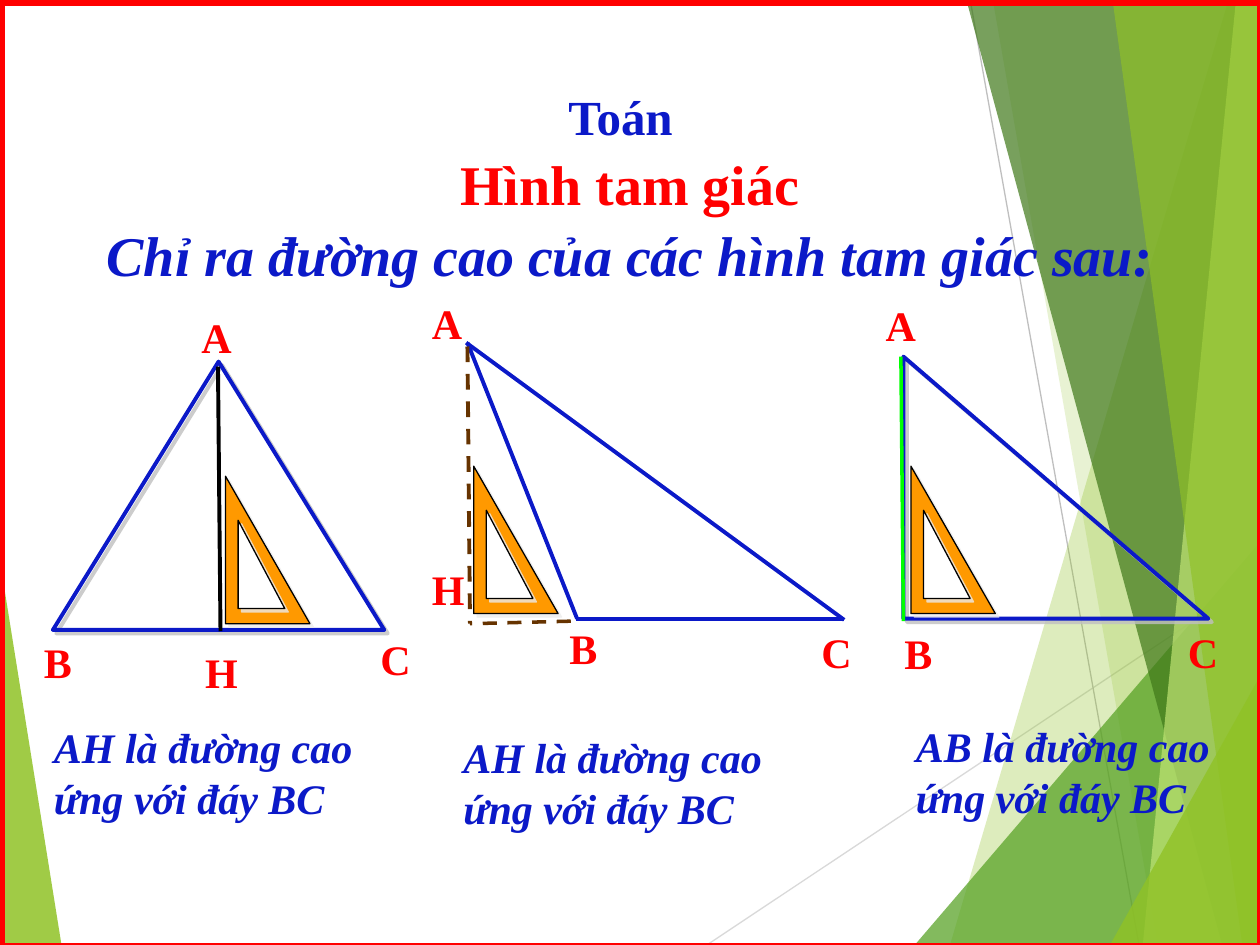
from dataclasses import dataclass
from typing import Optional

from lxml import etree
from pptx import Presentation
from pptx import util as u
from pptx.dml.color import RGBColor
from pptx.enum import dml, shapes, text
from pptx.oxml import ns


@dataclass(frozen=True)
class Theme:
    font: str = "Times New Roman"
    blue: str = "0B19C8"
    red: str = "FF0000"
    black: str = "000000"
    white: str = "FFFFFF"
    brown: str = "663300"
    green: str = "00FF00"
    orange: str = "FF9900"
    shadow: str = "C0C0C0"
    pale_shadow: str = "EBEBEB"
    leaf: str = "90C226"
    grass: str = "54A021"
    forest: str = "3F7819"
    lime: str = "C0E474"
    title: int = 32
    subject: int = 28
    body: int = 24
    outline: float = 2.25


@dataclass(frozen=True)
class Facet:
    points: tuple
    color: str
    alpha: int


@dataclass(frozen=True)
class Line:
    start: tuple
    end: tuple
    color: str
    width: float = 2.25
    dashed: bool = False


@dataclass(frozen=True)
class Label:
    words: str
    box: tuple
    color: str
    size: int = 24
    italic: bool = False
    centred: bool = False
    spaced: bool = True


T = Theme()
EDGE = 10.01

LEFT_FACET = Facet(((-0.01, 4.39), (0.49, 7.51), (-0.01, 7.5)), T.leaf, 85)
BACK_LINES = (
    Line((5.61, 7.5), (EDGE, 4.57), "D9D9D9", 0.75),
    Line((7.7, 0), (9.04, 7.5), "BFBFBF", 0.75),
)
RIGHT_FACETS = (
    Facet(((9.75, 0), (7.54, 7.5), (EDGE, 7.5), (EDGE, 0)), T.leaf, 30),
    Facet(((7.88, 0), (9.19, 7.5), (EDGE, 7.5), (EDGE, 0)), T.leaf, 20),
    Facet(((7.26, 7.5), (EDGE, 4.29), (EDGE, 7.5)), T.grass, 72),
    Facet(((7.67, 0), (9.7, 7.5), (EDGE, 7.5), (EDGE, 0)), T.forest, 70),
    Facet(((9.81, 0), (9.07, 7.5), (EDGE, 7.5), (EDGE, 0)), T.lime, 70),
    Facet(((8.83, 0), (9.86, 7.5), (10, 7.5), (9.98, 0)), T.leaf, 65),
    Facet(((8.81, 7.5), (EDGE, 5.35), (EDGE, 7.5)), T.leaf, 80),
)
VERTICES = (
    ("A", 1.5, 2.42), ("B", 0.25, 5), ("C", 2.92, 4.98), ("H", 1.53, 5.08),
    ("A", 3.33, 2.31), ("B", 4.42, 4.89), ("C", 6.42, 4.92), ("H", 3.33, 4.42),
    ("A", 6.93, 2.33), ("B", 7.08, 4.93), ("C", 9.33, 4.92),
)
FIGURE_LINES = (
    Line((3.71, 2.72), (4.58, 4.91), T.blue),
    Line((3.7, 2.72), (6.7, 4.92), T.blue),
    Line((4.57, 4.91), (6.7, 4.91), T.blue),
    Line((1.73, 2.91), (1.75, 5.01), T.black),
    Line((3.71, 2.75), (3.73, 4.95), T.brown, dashed=True),
    Line((4.53, 4.93), (3.73, 4.95), T.brown, 2, True),
    Line((7.15, 2.83), (7.17, 4.93), T.green, 2),
)
CAPTIONS = (
    ("AH", 0.33, 5.68, 2.92), ("AH", 3.58, 5.76, 3), ("AB", 7.17, 5.67, 2.83),
)
HEADINGS = (
    Label("Chỉ ra đường cao của các hình tam giác sau:", (0, 1.7, 10, 0.63),
          T.blue, T.title, True, True),
    Label("Toán", (0.05, 0.64, 9.75, 0.54), T.blue, T.subject,
          centred=True, spaced=False),
    Label("Hình tam giác", (0, 1.14, 10, 0.64), T.red, T.title,
          centred=True, spaced=False),
)
SET_SQUARES = ((1.79, 3.78), (3.76, 3.7), (7.23, 3.7))


def inch(value: float) -> u.Length:
    return u.Cm(value * 2.54)


def rgb(color: str) -> RGBColor:
    return RGBColor.from_string(color)


def add_facet(s, facet: Facet) -> None:
    points = [(inch(x), inch(y)) for x, y in facet.points]
    builder = s.shapes.build_freeform(*points[0])
    builder.add_line_segments(points[1:])
    sp = builder.convert_to_shape()
    sp.shadow.inherit = False
    sp.line.fill.background()
    sp.fill.solid()
    sp.fill.fore_color.rgb = rgb(facet.color)
    color = sp.fill._xPr.find(".//" + ns.qn("a:srgbClr"))
    etree.SubElement(color, ns.qn("a:alpha"), val=str(facet.alpha * 1000))


def add_line(s, line: Line) -> None:
    ends = [inch(v) for v in line.start + line.end]
    c = s.shapes.add_connector(shapes.MSO_CONNECTOR.STRAIGHT, *ends)
    c.line.color.rgb = rgb(line.color)
    c.line.width = u.Pt(line.width)
    if line.dashed:
        c.line.dash_style = dml.MSO_LINE.DASH
    etree.SubElement(c._element.spPr, ns.qn("a:effectLst"))


def add_figure(s, kind, box: tuple, line: str, width: float,
               fill: Optional[str] = None, shadow: Optional[str] = None) -> None:
    sp = s.shapes.add_shape(kind, *map(inch, box))
    sp.shadow.inherit = False
    sp.line.color.rgb = rgb(line)
    sp.line.width = u.Pt(width)
    if fill:
        sp.fill.solid()
        sp.fill.fore_color.rgb = rgb(fill)
    else:
        sp.fill.background()
    if shadow:
        effects = sp._element.spPr.find(ns.qn("a:effectLst"))
        outer = etree.SubElement(effects, ns.qn("a:outerShdw"),
                                 dist=str(u.Pt(2.8)), dir="2700000")
        color = etree.SubElement(outer, ns.qn("a:srgbClr"), val=shadow)
        etree.SubElement(color, ns.qn("a:alpha"), val="80000")


def add_label(s, label: Label) -> None:
    tf = s.shapes.add_textbox(*map(inch, label.box)).text_frame
    tf.word_wrap = True
    p = tf.paragraphs[0]
    p.text = label.words
    p.alignment = text.PP_ALIGN.CENTER if label.centred else text.PP_ALIGN.LEFT
    p.font.name = T.font
    p.font.size = u.Pt(label.size)
    p.font.bold = True
    p.font.italic = label.italic
    p.font.color.rgb = rgb(label.color)
    if label.spaced:
        before = etree.Element(ns.qn("a:spcBef"))
        etree.SubElement(before, ns.qn("a:spcPct"), val="50000")
        p._p.pPr.insert(0, before)


def main() -> None:
    prs = Presentation()
    prs.slide_width, prs.slide_height = inch(10), inch(7.5)
    s = prs.slides.add_slide(prs.slide_layouts[6])
    kinds = shapes.MSO_SHAPE

    add_facet(s, LEFT_FACET)
    for line in BACK_LINES:
        add_line(s, line)
    for facet in RIGHT_FACETS:
        add_facet(s, facet)

    add_figure(s, kinds.ISOSCELES_TRIANGLE, (0.42, 2.87, 2.63, 2.13),
               T.blue, T.outline, shadow=T.shadow)
    add_figure(s, kinds.RIGHT_TRIANGLE, (7.17, 2.83, 2.42, 2.08),
               T.blue, T.outline, shadow=T.shadow)
    for line in FIGURE_LINES:
        add_line(s, line)
    for name, x, y in VERTICES:
        add_label(s, Label(name, (x, y, 0.45, 0.5), T.red, T.body))
    for height, x, y, width in CAPTIONS:
        add_label(s, Label(f"{height} là đường cao ứng với đáy BC",
                           (x, y, width, 0.91), T.blue, T.body, True))
    for x, y in SET_SQUARES:
        for box, fill in (((x, y, 0.67, 1.17), T.orange),
                          ((x + 0.1, y + 0.35, 0.37, 0.7), T.white)):
            add_figure(s, kinds.RIGHT_TRIANGLE, box, T.black, 0.75, fill, T.pale_shadow)

    add_figure(s, kinds.RECTANGLE, (0.01, 0.02, 10, 7.5), T.red, 4.5)
    for heading in HEADINGS:
        add_label(s, heading)
    prs.save("out.pptx")


if __name__ == "__main__":
    main()
